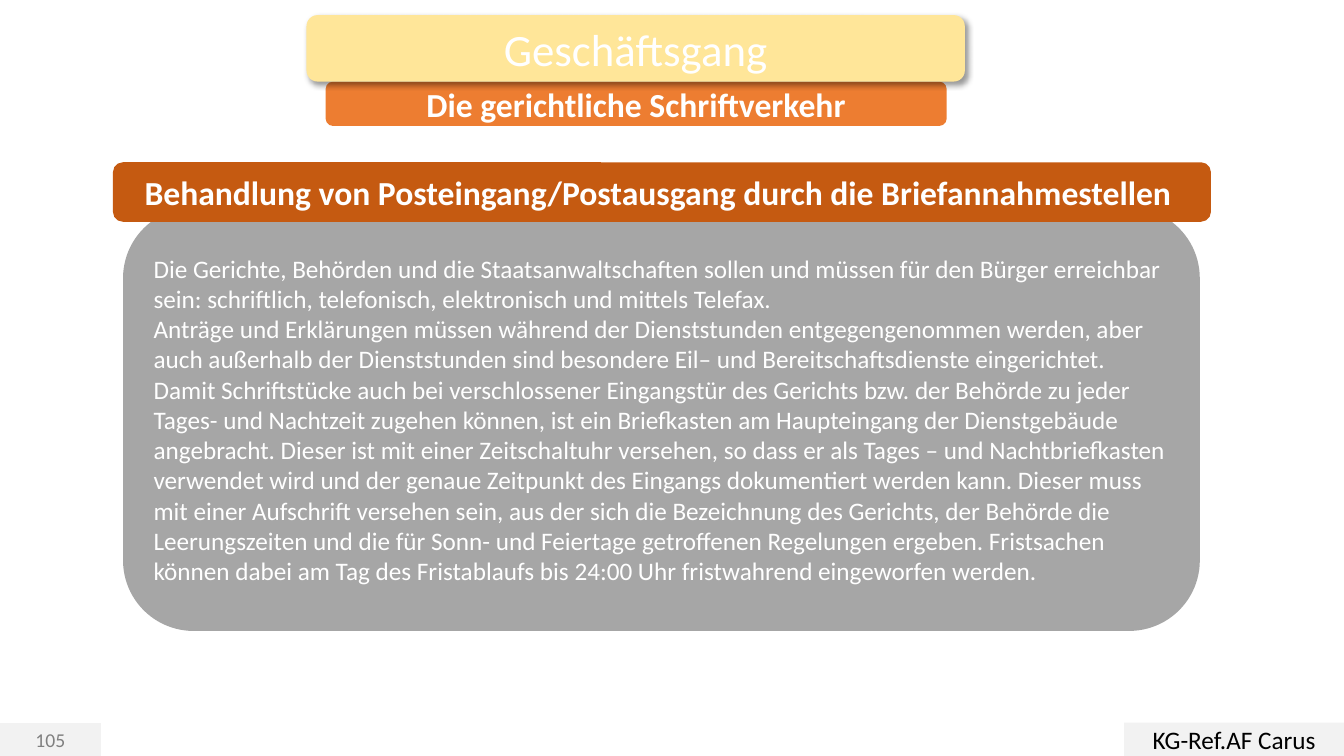
from lxml import etree
from pptx import Presentation
from pptx.dml.color import RGBColor
from pptx.enum.shapes import MSO_SHAPE
from pptx.enum.text import MSO_ANCHOR, PP_ALIGN
from pptx.oxml.ns import qn
from pptx.util import Inches, Pt

RECT, ROUND = MSO_SHAPE.RECTANGLE, MSO_SHAPE.ROUNDED_RECTANGLE
LEFT, CENTER = PP_ALIGN.LEFT, PP_ALIGN.CENTER
MIDDLE = MSO_ANCHOR.MIDDLE
FONT = "Calibri"
COLORS = {
    "footer": "F2F2F2", "number": "808080", "black": "000000", "white": "FFFFFF",
    "title": "FFE699", "subtitle": "ED7D31", "heading": "C55A11", "body": "A6A6A6",
}

REACHABILITY = [
    "Die Gerichte, Behörden und die Staatsanwaltschaften sollen und müssen für den Bürger "
    "erreichbar sein: schriftlich, telefonisch, elektronisch und mittels Telefax.",
]
RECEIPT = [
    "Anträge und Erklärungen müssen während der Dienststunden entgegengenommen werden, aber "
    "auch außerhalb der Dienststunden sind besondere Eil– und Bereitschaftsdienste eingerichtet.",
    "Damit Schriftstücke auch bei verschlossener Eingangstür des Gerichts bzw. der Behörde zu "
    "jeder Tages- und Nachtzeit zugehen können, ist ein Briefkasten am Haupteingang der "
    "Dienstgebäude angebracht.",
    "Dieser ist mit einer Zeitschaltuhr versehen, so dass er als Tages – und Nachtbriefkasten "
    "verwendet wird und der genaue Zeitpunkt des Eingangs dokumentiert werden kann.",
    "Dieser muss mit einer Aufschrift versehen sein, aus der sich die Bezeichnung des Gerichts, "
    "der Behörde die Leerungszeiten und die für Sonn- und Feiertage getroffenen Regelungen "
    "ergeben.",
    "Fristsachen können dabei am Tag des Fristablaufs bis 24:00 Uhr fristwahrend eingeworfen "
    "werden.",
]
BODY = [" ".join(sentences) for sentences in (REACHABILITY, RECEIPT)]

# paragraphs, (left, top, width, height), preset, fill, text format; back to front
PANELS = [
    (["105"], (0, 7.18, 1, 0.32), RECT, "footer", dict(size=14, color="number")),
    (["KG-Ref.AF Carus"], (11.15, 7.17, 2.18, 0.33), RECT, "footer",
     dict(size=18, color="black")),
    (["Die gerichtliche Schriftverkehr"], (3.23, 0.81, 6.16, 0.44), ROUND, "subtitle",
     dict(size=24, bold=True)),
    (["Geschäftsgang"], (3.04, 0.15, 6.53, 0.66), ROUND, "title", dict(size=32)),
    (BODY, (1.22, 2.06, 10.68, 4.2), ROUND, "body", dict(size=18, align=LEFT)),
    (["Behandlung von Posteingang/Postausgang durch die Briefannahmestellen "],
     (1.12, 1.61, 10.89, 0.59), ROUND, "heading", dict(size=24, bold=True)),
]


def rgb(name):
    return RGBColor.from_string(COLORS[name])


def write_text(s, paragraphs, size, color="white", bold=False, align=CENTER):
    tf = s.text_frame
    tf.word_wrap = True
    tf.vertical_anchor = MIDDLE
    for i, text in enumerate(paragraphs):
        p = tf.add_paragraph() if i else tf.paragraphs[0]
        p.alignment = align
        r = p.add_run()
        r.text = text
        r.font.name, r.font.size, r.font.bold = FONT, Pt(size), bold
        r.font.color.rgb = rgb(color)


def add_panel(slide, paragraphs, box, preset, fill, text_format):
    s = slide.shapes.add_shape(preset, *map(Inches, box))
    s.shadow.inherit = False
    s.fill.solid()
    s.fill.fore_color.rgb = rgb(fill)
    s.line.fill.background()
    write_text(s, paragraphs, **text_format)
    return s


def add_drop_shadow(s):
    effects = s._element.spPr.find(qn("a:effectLst"))
    shadow = etree.SubElement(effects, qn("a:outerShdw"), blurRad=str(Pt(4)),
                              dist=str(Pt(3)), dir="2700000", algn="tl", rotWithShape="0")
    color = etree.SubElement(shadow, qn("a:srgbClr"), val=COLORS["black"])
    etree.SubElement(color, qn("a:alpha"), val="40000")


def main():
    prs = Presentation()
    prs.slide_width, prs.slide_height = Inches(13.33), Inches(7.5)
    slide = prs.slides.add_slide(prs.slide_layouts[6])
    number, _, _, title, _, _ = [add_panel(slide, *panel) for panel in PANELS]
    number.line.color.rgb = rgb("footer")
    number.line.width = Pt(1)
    add_drop_shadow(title)
    prs.save("out.pptx")


if __name__ == "__main__":
    main()
